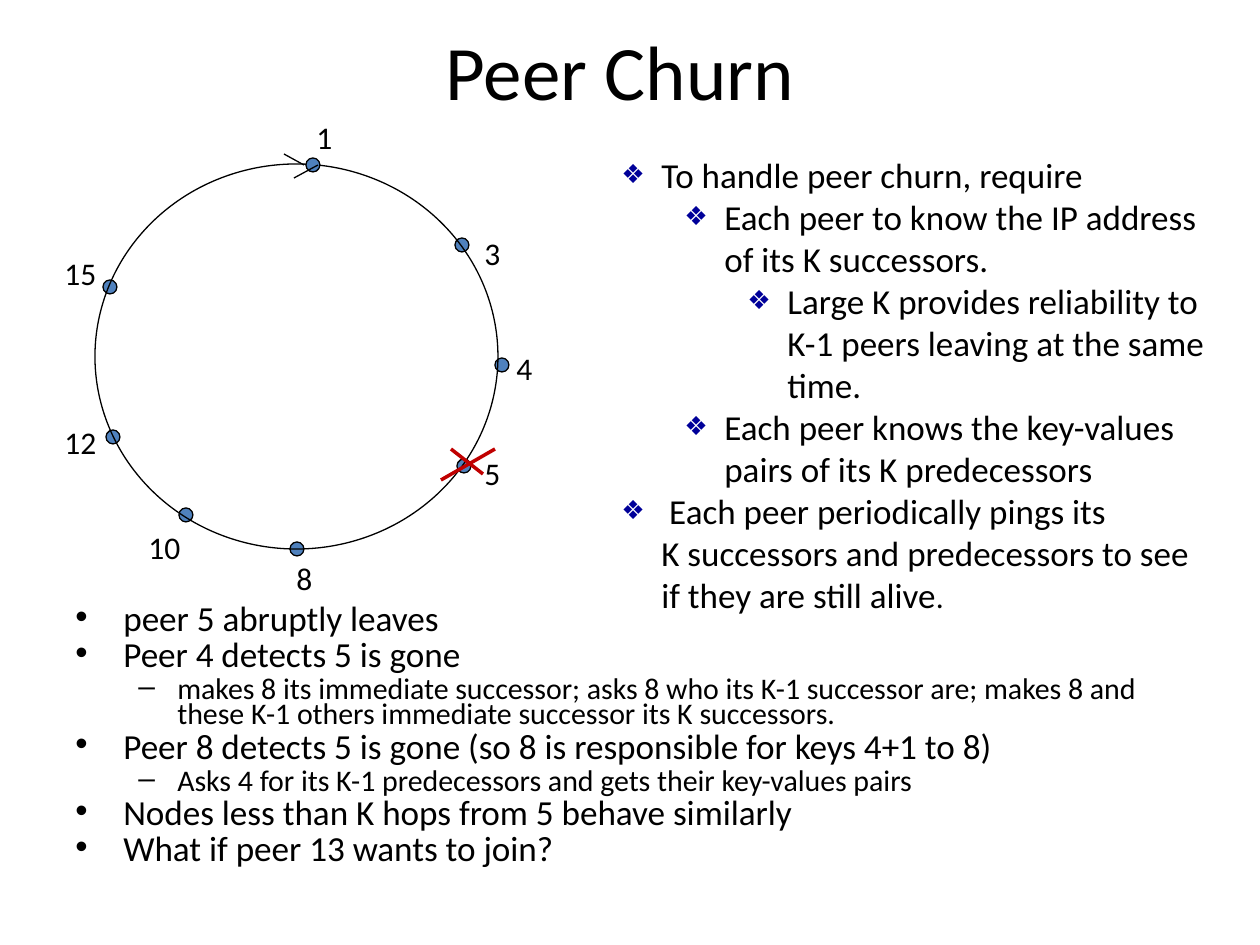
from lxml import etree
from pptx import Presentation, util as u
from pptx.dml.color import RGBColor
from pptx.enum import shapes, text
from pptx.oxml import ns

PX = 914400 // 126
FONT = "Calibri"
BLACK = RGBColor(0x00, 0x00, 0x00)
BLUE = RGBColor(0x4F, 0x81, 0xBD)
NAVY = RGBColor(0x00, 0x00, 0x99)
RED = RGBColor(0xC0, 0x00, 0x00)
DOT = 14

FIRST_PEER = ("1", (306, 158), (304, 112, 40))
PEERS = [
    ("3", (455, 238), (472, 228, 45)),
    ("4", (495, 358), (504, 343, 45)),
    ("5", (457, 459), (472, 448, 45)),
    ("8", (290, 542), (284, 553, 45)),
    ("10", (179, 508), (136, 522, 59)),
    ("12", (106, 430), (52, 417, 59)),
    ("15", (103, 280), (52, 248, 59)),
]
ARROW = [(284, 154, 304, 165), (318, 165, 294, 178)]
CROSS = [(451, 449, 483, 474), (495, 449, 441, 480)]
EVENTS = [
    (0, "peer 5 abruptly leaves"),
    (0, "Peer 4 detects 5 is gone"),
    (1, "makes 8 its immediate successor; asks 8 who its K-1 successor are; "
        "makes 8 and these K-1 others immediate successor its K successors."),
    (0, "Peer 8 detects 5 is gone (so 8 is responsible for keys 4+1 to 8)"),
    (1, "Asks 4 for its K-1 predecessors and gets their key-values pairs"),
    (0, "Nodes less than K hops from 5 behave similarly"),
    (0, "What if peer 13 wants to join?"),
]
EVENT_STYLES = [("•", 48, 48, 20.1), ("–", 102, 39, 17.1)]
RULES = [
    (0, "To handle peer churn, require"),
    (1, "Each peer to know the IP address of its K successors."),
    (2, "Large K provides reliability to K-1 peers leaving at the same time."),
    (1, "Each peer knows the key-values pairs of its K predecessors"),
    (0, " Each peer periodically pings its \nK successors and predecessors "
        "to see if they are still alive"),
]


def style(span, size):
    span.font.name = FONT
    span.font.size = u.Pt(size)
    span.font.color.rgb = BLACK


def add_box(page, left, top, width, height, wrap=True):
    box = page.shapes.add_textbox(left * PX, top * PX, width * PX, height * PX)
    box.text_frame.word_wrap = wrap
    return box.text_frame


def add_para(frame, index, words, level, size):
    para = frame.paragraphs[0] if index == 0 else frame.add_paragraph()
    para.text = words
    para.level = level
    for span in para.runs:
        style(span, size)
    return para


def set_bullet(para, char, margin, hang, color=None, percent=None):
    props = para._p.get_or_add_pPr()
    props.set("marL", str(margin * PX))
    props.set("indent", str(-hang * PX))
    if color is not None:
        holder = etree.SubElement(props, ns.qn("a:buClr"))
        etree.SubElement(holder, ns.qn("a:srgbClr"), val=str(color))
    if percent is not None:
        etree.SubElement(props, ns.qn("a:buSzPct"), val=str(percent * 1000))
    etree.SubElement(props, ns.qn("a:buFont"), typeface="Arial")
    etree.SubElement(props, ns.qn("a:buChar"), char=char)


def add_oval(page, left, top, width, height, fill=None):
    oval = page.shapes.add_shape(
        shapes.MSO_SHAPE.OVAL, left * PX, top * PX, width * PX, height * PX)
    oval.shadow.inherit = False
    if fill is None:
        oval.fill.background()
    else:
        oval.fill.solid()
        oval.fill.fore_color.rgb = fill
    oval.line.color.rgb = BLACK
    oval.line.width = u.Pt(0.75)


def add_line(page, ends, color, width):
    line = page.shapes.add_connector(
        shapes.MSO_CONNECTOR.STRAIGHT, *(end * PX for end in ends))
    line.line.color.rgb = color
    line.line.width = u.Pt(width)
    etree.SubElement(line._element.spPr, ns.qn("a:effectLst"))


def add_label(page, words, left, top, width):
    frame = add_box(page, left, top, width, 50, wrap=False)
    add_para(frame, 0, words, 0, 18)


def add_title(page):
    frame = add_box(page, 53, 0, 1134, 140)
    frame.vertical_anchor = text.MSO_ANCHOR.MIDDLE
    add_para(frame, 0, "Peer Churn", 0, 44).alignment = text.PP_ALIGN.CENTER


def add_ring(page):
    for _, spot, _ in PEERS:
        add_oval(page, *spot, DOT, DOT, BLUE)
    add_oval(page, 95, 164, 403, 385)
    for name, _, place in [FIRST_PEER] + PEERS:
        add_label(page, name, *place)
    add_oval(page, *FIRST_PEER[1], DOT, DOT, BLUE)
    for ends in ARROW:
        add_line(page, ends, BLACK, 0.75)
    for ends in CROSS:
        add_line(page, ends, RED, 2)


def add_events(page):
    frame = add_box(page, 63, 602, 1134, 294)
    for index, (level, words) in enumerate(EVENTS):
        char, margin, hang, size = EVENT_STYLES[level]
        para = add_para(frame, index, words, level, size)
        para.line_spacing = 0.7
        para.space_before = u.Pt(3.4)
        set_bullet(para, char, margin, hang)


def add_rules(page):
    frame = add_box(page, 609, 147, 610, 518)
    for index, (level, words) in enumerate(RULES):
        para = add_para(frame, index, words, level, 20)
        set_bullet(para, "❖", 40 + 63 * level, 40, NAVY, 75)
    stop = para.add_run()
    stop.text = "."
    style(stop, 18)


def main():
    deck = Presentation()
    deck.slide_width = u.Inches(10)
    deck.slide_height = u.Inches(7.5)
    page = deck.slides.add_slide(deck.slide_layouts[6])
    add_title(page)
    add_events(page)
    add_ring(page)
    add_rules(page)
    deck.save("out.pptx")


if __name__ == "__main__":
    main()
